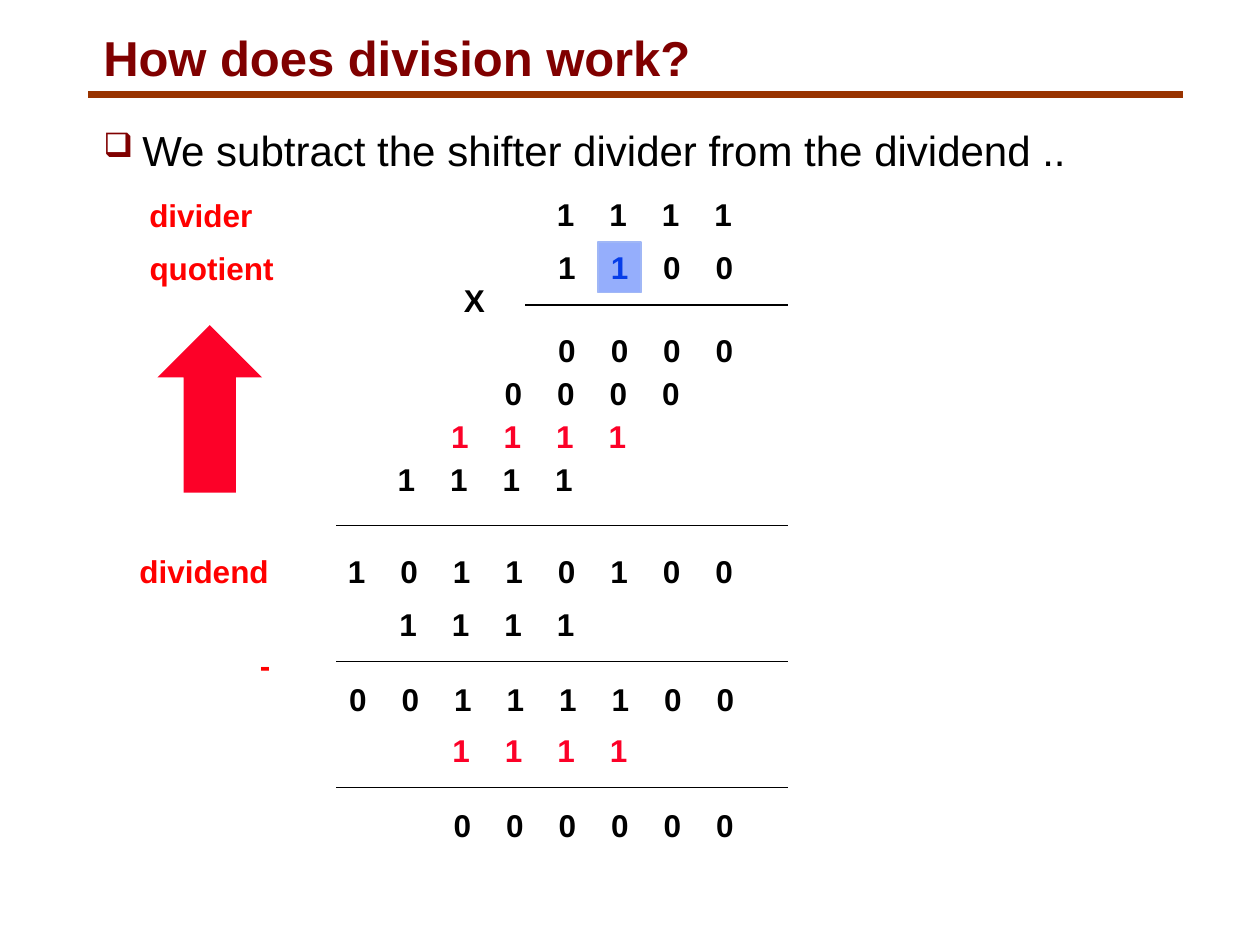
from lxml.etree import SubElement
from pptx import Presentation
from pptx.dml.color import RGBColor
from pptx.enum.shapes import MSO_CONNECTOR, MSO_SHAPE
from pptx.enum.text import PP_ALIGN
from pptx.oxml.ns import qn
from pptx.util import Inches, Pt

BLACK, RED, CRIMSON, MAROON = "000000", "FF0000", "FC0128", "800000"
PITCH = 5 / 12          # distance between digit columns
CELL_W, CELL_H = 0.34, 0.4


def rgb(value):
    return RGBColor.from_string(value)


def write(sp, text, size=18, color=BLACK, bold=True, align=PP_ALIGN.CENTER,
          wrap=False, insets=(0.1, 0.05), spacing=None):
    tf = sp.text_frame
    tf.word_wrap = wrap
    tf.margin_left = tf.margin_right = Inches(insets[0])
    tf.margin_top = tf.margin_bottom = Inches(insets[1])
    p = tf.paragraphs[0]
    p.alignment = align
    if spacing:
        p.line_spacing = spacing
    r = p.add_run()
    r.text = text
    r.font.name, r.font.size, r.font.bold = "Arial", Pt(size), bold
    r.font.color.rgb = rgb(color)
    return p


def add_text(slide, box, text, **fmt):
    return write(slide.shapes.add_textbox(*map(Inches, box)), text, **fmt)


def add_shape(slide, kind, box, fill, line=None):
    sp = slide.shapes.add_shape(kind, *map(Inches, box))
    sp.shadow.inherit = False
    sp.fill.solid()
    sp.fill.fore_color.rgb = rgb(fill)
    if line:
        sp.line.color.rgb = rgb(line)
        sp.line.width = Pt(0.75)
    else:
        sp.line.fill.background()
    return sp


def add_rule(slide, left, right, y, color=BLACK, width=1):
    line = slide.shapes.add_connector(
        MSO_CONNECTOR.STRAIGHT, Inches(left), Inches(y), Inches(right), Inches(y))
    line.line.color.rgb = rgb(color)
    line.line.width = Pt(width)
    SubElement(line._element.spPr, qn("a:effectLst"))


def add_bullet(p, char, color, percent, indent):
    pPr = p._p.get_or_add_pPr()
    pPr.set("marL", str(Inches(indent)))
    pPr.set("indent", str(-Inches(indent)))
    bullet_color = SubElement(pPr, qn("a:buClr"))
    SubElement(bullet_color, qn("a:srgbClr"), val=color)
    SubElement(pPr, qn("a:buSzPct"), val=str(percent * 1000))
    SubElement(pPr, qn("a:buChar"), char=char)


def add_header(slide, left, top, width):
    add_rule(slide, left - 0.05, left + width + 0.06, top + 0.5, "993300", 4.5)
    fmt = dict(align=PP_ALIGN.LEFT, insets=(0.07, 0.03))
    add_text(slide, (left, top, 4.86, 0.47), "How does division work?",
             size=28, color=MAROON, spacing=0.87, **fmt)
    p = add_text(slide, (left, top + 0.75, width, 0.42),
                 "We subtract the shifter divider from the dividend ..",
                 size=24, bold=False, wrap=True, spacing=0.9, **fmt)
    add_bullet(p, "❑", MAROON, 80, 0.31)


def add_digits(slide, left, top, digits, color=BLACK, highlight=None):
    for i, digit in enumerate(digits):
        box = (left + i * PITCH, top, CELL_W, CELL_H)
        if i == highlight:
            sp = add_shape(slide, MSO_SHAPE.RECTANGLE, box, "95AEFC", "A0B7F6")
            write(sp, digit, color="063DE8")
        else:
            add_text(slide, box, digit, color=color)


def add_multiplication(slide, left, top, right):
    # Factors
    add_digits(slide, left + 1.65, top, "1111")
    add_digits(slide, left + 1.66, top + 0.42, "1100", highlight=1)
    add_text(slide, (left + 0.91, top + 0.68, 0.37, CELL_H), "X")
    add_rule(slide, left + 1.5, right, top + 0.92)
    # Partial products, each shifted one column to the left
    products = [("0000", BLACK), ("0000", BLACK), ("1111", CRIMSON), ("1111", BLACK)]
    for i, (digits, color) in enumerate(products):
        add_digits(slide, left + 1.66 - i * 0.425, top + 1.08 + i * 0.34, digits, color)
    add_rule(slide, left, right, top + 2.67)


def add_subtraction(slide, left, top, right):
    # Dividend, then alternating subtrahends and remainders
    add_digits(slide, left - 0.01, top, "10110100")
    add_digits(slide, left + 0.4, top + 0.42, "1111")
    add_rule(slide, left, right, top + 0.92)
    add_digits(slide, left, top + 1.02, "00111100")
    add_digits(slide, left + 0.82, top + 1.42, "1111", CRIMSON)
    add_rule(slide, left, right, top + 1.92)
    add_digits(slide, left + 0.83, top + 2.02, "000000")


def add_labels(slide, left, top):
    labels = [("divider", 0.08, 0, 1.03), ("quotient", 0.08, 0.42, 1.2),
              ("dividend", 0, 2.82, 1.24), ("-", 0.96, 3.57, 0.29)]
    for text, dx, dy, width in labels:
        add_text(slide, (left + dx, top + dy, width, CELL_H), text, color=RED)
    add_shape(slide, MSO_SHAPE.UP_ARROW,
              (left + 0.25, top + 1.07, 0.83, 1.33), CRIMSON)


def main():
    prs = Presentation()
    prs.slide_width, prs.slide_height = Inches(10), Inches(7.5)
    slide = prs.slides.add_slide(prs.slide_layouts[6])
    add_header(slide, 0.75, 0.25, 8.58)
    add_labels(slide, 1, 1.51)
    add_multiplication(slide, 2.67, 1.5, 6.25)
    add_subtraction(slide, 2.67, 4.33, 6.25)
    prs.save("out.pptx")


if __name__ == "__main__":
    main()
